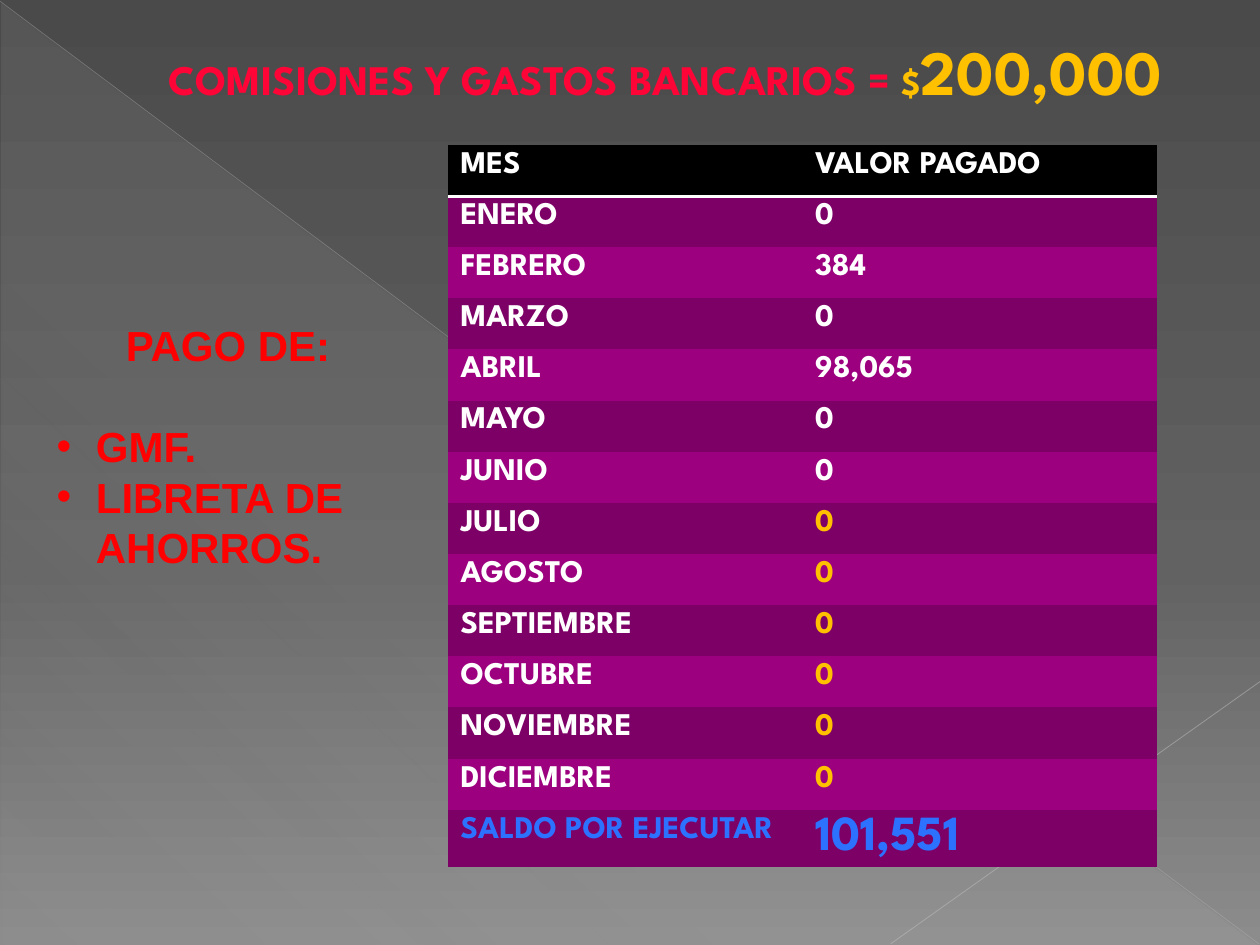
"""Build the bank fees slide: monthly payments against the annual budget."""
from typing import NamedTuple

from lxml.etree import SubElement
from pptx import Presentation
from pptx.dml.color import RGBColor as RGB
from pptx.enum.shapes import MSO_CONNECTOR as CONN, MSO_SHAPE as SHAPE
from pptx.enum.text import MSO_ANCHOR as ANCHOR, MSO_AUTO_SIZE as AUTO, PP_ALIGN as ALIGN
from pptx.oxml.ns import qn
from pptx.util import Pt

COLORS = {
    "white": "FFFFFF", "black": "000000", "red": "FF0000", "crimson": "FF0537",
    "gold": "FFC000", "blue": "2C71FF", "dark": "7D0066", "light": "9C007F",
}
SPARTAN, ARIAL = "League Spartan", "Arial"


class Stop(NamedTuple):
    pos: int
    color: str
    alpha: int = 100


class Ray(NamedTuple):
    start: tuple[float, float]
    end: tuple[float, float]
    color: str
    width: float
    alpha: int


class Row(NamedTuple):
    label: str
    value: str
    label_color: str = "white"
    value_color: str = "white"
    value_size: float = 18


BACKDROP = [Stop(0, "4A4A4A"), Stop(60, "626262"), Stop(100, "8C8C8C")]
SHEEN = [Stop(0, "D2D2D2", 10), Stop(70, "D2D2D2", 8), Stop(100, "D2D2D2", 1)]
TITLE_FILL = [Stop(0, "FF8597"), Stop(75, "FF0537"), Stop(100, "A90042")]
RAYS = [
    Ray((0, 0.7), (719.3, 539.3), "BFBFBF", 0.39, 35),
    Ray((720, 389.5), (509, 539.3), "C6C6C6", 0.47, 45),
]
ROWS = [
    Row("MES", "VALOR PAGADO"),
    Row("ENERO", "0"),
    Row("FEBRERO", "384"),
    Row("MARZO", "0"),
    Row("ABRIL", "98,065"),
    Row("MAYO", "0"),
    Row("JUNIO", "0"),
    *(Row(month, "0", value_color="gold") for month in
      ("JULIO", "AGOSTO", "SEPTIEMBRE", "OCTUBRE", "NOVIEMBRE", "DICIEMBRE")),
    Row("SALDO POR EJECUTAR", "101,551", "blue", "blue", 28),
]


def set_alpha(parent, alpha: int) -> None:
    for clr in parent.iter(qn("a:srgbClr")):
        SubElement(clr, qn("a:alpha"), val=str(alpha * 1000))


def set_gradient(fill, parent, stops: list[Stop], angle: int) -> None:
    fill.solid()
    old = parent.find(qn("a:solidFill"))
    grad = SubElement(parent, qn("a:gradFill"), rotWithShape="1")
    parent.replace(old, grad)
    gs_list = SubElement(grad, qn("a:gsLst"))
    for stop in stops:
        gs = SubElement(gs_list, qn("a:gs"), pos=str(stop.pos * 1000))
        SubElement(gs, qn("a:srgbClr"), val=stop.color)
        if stop.alpha < 100:
            set_alpha(gs, stop.alpha)
    SubElement(grad, qn("a:lin"), ang=str(angle * 60000), scaled="0")


def add_run(p, text: str, font: str, size: float, color: str):
    r = p.add_run()
    r.text = text
    r.font.name, r.font.size, r.font.bold = font, Pt(size), True
    r.font.color.rgb = RGB.from_string(COLORS[color])
    return r


def draw_backdrop(s) -> None:
    fill = s.background.fill
    fill.solid()
    set_gradient(fill, s.background._cSld.bg.bgPr, BACKDROP, 90)
    sp = s.shapes.add_shape(SHAPE.RIGHT_TRIANGLE, Pt(0.7), Pt(1.4), Pt(718.6), Pt(538.6))
    sp.shadow.inherit = False
    sp.line.fill.background()
    set_gradient(sp.fill, sp._element.spPr, SHEEN, 133)
    for ray in RAYS:
        line = s.shapes.add_connector(CONN.STRAIGHT, *map(Pt, ray.start + ray.end))
        line.line.width = Pt(ray.width)
        line.line.color.rgb = RGB.from_string(ray.color)
        set_alpha(line._element.spPr, ray.alpha)
        SubElement(line._element.spPr, qn("a:effectLst"))


def draw_title(s) -> None:
    title = s.shapes.title
    title.left, title.top, title.width, title.height = map(Pt, (65.5, 15.1, 629.3, 51.1))
    s.shapes._spTree.append(title._element)
    tf = title.text_frame
    tf.word_wrap, tf.auto_size, tf.vertical_anchor = True, AUTO.NONE, ANCHOR.TOP
    p = tf.paragraphs[0]
    p.alignment = ALIGN.CENTER
    r = add_run(p, "COMISIONES Y GASTOS BANCARIOS = ", SPARTAN, 24, "crimson")
    set_gradient(r.font.fill, r._r.rPr, TITLE_FILL, 90)
    add_run(p, "$", SPARTAN, 20, "gold")
    add_run(p, "200,000", SPARTAN, 36, "gold")


def draw_table(s) -> None:
    frame = s.shapes.add_table(len(ROWS), 2, Pt(256), Pt(82.8), Pt(405.2), Pt(29.23 * len(ROWS)))
    table = frame.table
    table.horz_banding = False
    style = table._tbl.tblPr.find(qn("a:tableStyleId"))
    style.text = "{2D5ABB26-0587-4C30-8999-92F81FD0307C}"
    for i, row in enumerate(ROWS):
        table.rows[i].height = Pt(29.23)
        fill = "black" if i == 0 else ("light", "dark")[i % 2]
        texts = [(row.label, 18, row.label_color), (row.value, row.value_size, row.value_color)]
        for cell, (text, size, color) in zip(table.rows[i].cells, texts):
            cell.fill.solid()
            cell.fill.fore_color.rgb = RGB.from_string(COLORS[fill])
            add_run(cell.text_frame.paragraphs[0], text, SPARTAN, size, color)
            if i == 0:
                tc_pr = cell._tc.get_or_add_tcPr()
                border = SubElement(tc_pr, qn("a:lnB"), w=str(Pt(2)))
                tc_pr.insert(0, border)
                solid = SubElement(border, qn("a:solidFill"))
                SubElement(solid, qn("a:srgbClr"), val=COLORS["white"])


def draw_payments(s) -> None:
    tf = s.shapes.add_textbox(Pt(25.2), Pt(179.3), Pt(210.2), Pt(181.4)).text_frame
    tf.word_wrap = True
    p = tf.paragraphs[0]
    p.alignment, p.line_spacing = ALIGN.CENTER, Pt(28.8)
    add_run(p, "PAGO DE:", ARIAL, 24, "red")
    for i, item in enumerate(("GMF.", "LIBRETA DE AHORROS.")):
        p = tf.add_paragraph()
        p.line_spacing = Pt(28.8)
        p.space_before = Pt(0 if i else 28.8)
        p_pr = p._p.get_or_add_pPr()
        p_pr.set("marL", str(Pt(22.5)))
        p_pr.set("indent", str(-Pt(22.5)))
        SubElement(p_pr, qn("a:buFont"), typeface=ARIAL)
        SubElement(p_pr, qn("a:buChar"), char="•")
        add_run(p, item, ARIAL, 24, "red")


def main() -> None:
    prs = Presentation()
    prs.slide_width, prs.slide_height = Pt(720), Pt(540)
    s = prs.slides.add_slide(prs.slide_layouts[5])
    draw_backdrop(s)
    draw_table(s)
    draw_title(s)
    draw_payments(s)
    prs.save("out.pptx")


if __name__ == "__main__":
    main()
